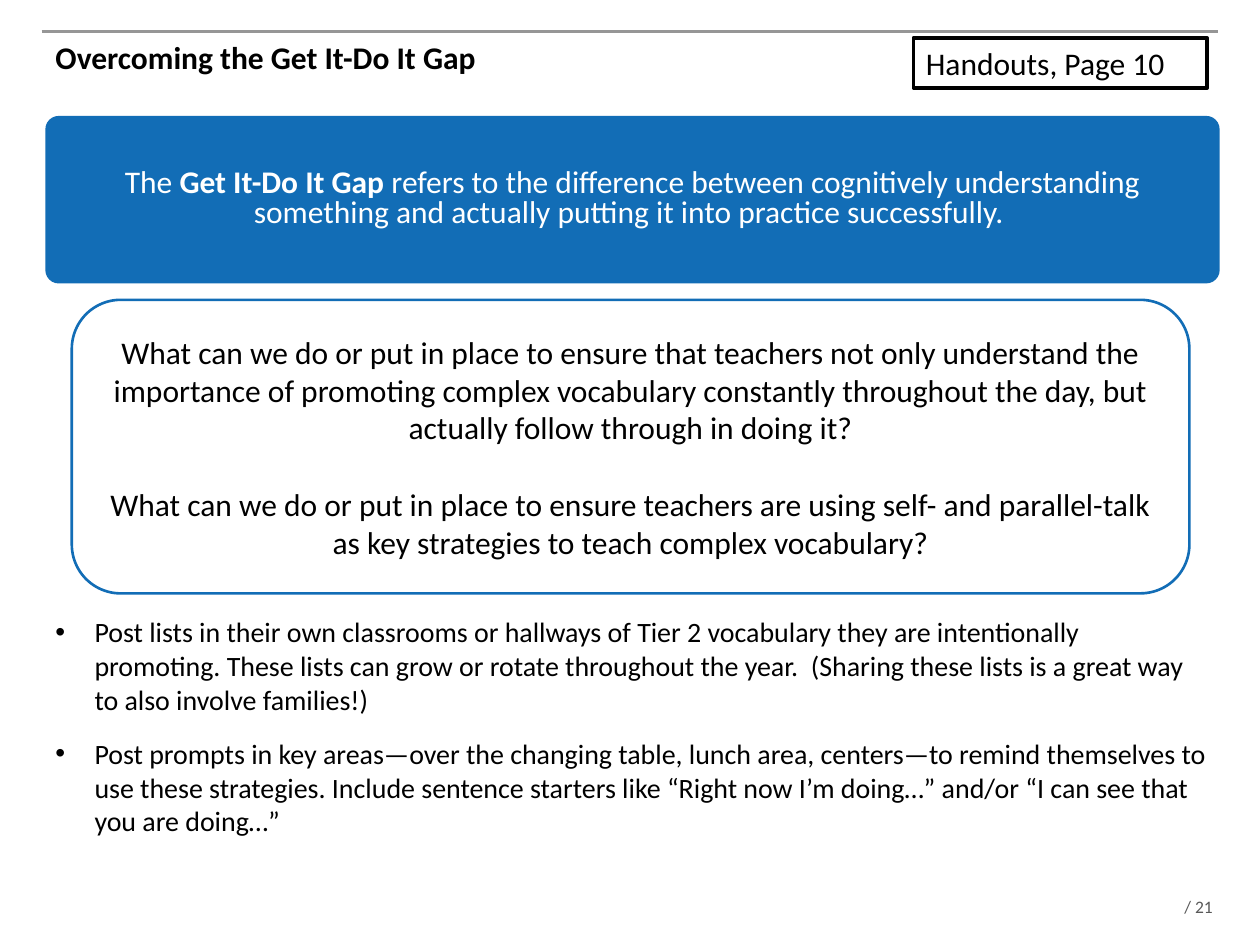
import dataclasses
import typing

import lxml.etree
import pptx
import pptx.dml.color
import pptx.enum.shapes
import pptx.enum.text
import pptx.oxml.ns
import pptx.util

Inches = pptx.util.Inches
Pt = pptx.util.Pt
Color = pptx.dml.color.RGBColor.from_string
Align = pptx.enum.text.PP_ALIGN
Anchor = pptx.enum.text.MSO_ANCHOR
Shape = pptx.enum.shapes.MSO_SHAPE
Fit = pptx.enum.text.MSO_AUTO_SIZE


@dataclasses.dataclass(frozen=True)
class Theme:
    font: str = "Calibri"
    blue: str = "126DB6"
    black: str = "000000"
    white: str = "FFFFFF"
    rule: str = "969696"
    gray: str = "595959"
    head: int = 18
    list: int = 16
    note: int = 10


THEME = Theme()


class Run(typing.NamedTuple):
    text: str
    bold: bool = False


@dataclasses.dataclass(frozen=True)
class Text:
    paras: list[list[Run]]
    size: int = THEME.head
    color: str = THEME.black
    align: Align = Align.LEFT
    anchor: Anchor = Anchor.TOP
    gap: float = 0
    lead: float = 1.0
    bullet: bool = False


@dataclasses.dataclass(frozen=True)
class Box:
    kind: Shape
    area: tuple[float, float, float, float]
    text: Text
    fill: str | None = None
    line: str | None = None
    width: float = 0
    round: float | None = None


def apply(item: typing.Any, form: dict[str, typing.Any]) -> None:
    for name, value in form.items():
        setattr(item, name, value)


def place(shape: typing.Any, area: tuple[float, float, float, float]) -> None:
    names = ("left", "top", "width", "height")
    apply(shape, dict(zip(names, map(Inches, area))))


def add_bullet(para: typing.Any) -> None:
    props = para._p.get_or_add_pPr()
    props.set("marL", str(Inches(0.31)))
    props.set("indent", str(Inches(-0.31)))
    for tag, key, value in (("a:buFont", "typeface", "Arial"), ("a:buChar", "char", "•")):
        lxml.etree.SubElement(props, pptx.oxml.ns.qn(tag)).set(key, value)


def write(frame: typing.Any, text: Text) -> None:
    apply(frame, {"word_wrap": True, "auto_size": Fit.NONE, "vertical_anchor": text.anchor})
    for index, runs in enumerate(text.paras):
        para = frame.add_paragraph() if index else frame.paragraphs[0]
        if text.bullet:
            add_bullet(para)
        apply(para, {
            "alignment": text.align,
            "line_spacing": text.lead,
            "space_before": Pt(text.gap if index else 0),
        })
        for part in runs:
            run = para.add_run()
            run.text = part.text
            apply(run.font, {"name": THEME.font, "size": Pt(text.size), "bold": part.bold})
            run.font.color.rgb = Color(text.color)


def draw_box(slide: typing.Any, box: Box) -> None:
    shape = slide.shapes.add_shape(box.kind, *map(Inches, box.area))
    shape.shadow.inherit = False
    if box.round is not None:
        shape.adjustments[0] = box.round
    if box.fill:
        shape.fill.solid()
        shape.fill.fore_color.rgb = Color(box.fill)
    else:
        shape.fill.background()
    if box.line:
        shape.line.color.rgb = Color(box.line)
        shape.line.width = Pt(box.width)
    else:
        shape.line.fill.background()
    write(shape.text_frame, box.text)


def draw_rule(slide: typing.Any, left: float, right: float, top: float) -> None:
    rule = slide.shapes.add_connector(
        pptx.enum.shapes.MSO_CONNECTOR.STRAIGHT,
        Inches(left), Inches(top), Inches(right), Inches(top))
    rule.line.color.rgb = Color(THEME.rule)
    rule.line.width = Pt(2)
    lxml.etree.SubElement(rule._element.spPr, pptx.oxml.ns.qn("a:effectLst"))


TITLE = Text([[Run("Overcoming the Get It-Do It Gap", True)]])
TIPS = Text([
    [Run("Post lists in their own classrooms or hallways of Tier 2 vocabulary they are "
         "intentionally promoting. These lists can grow or rotate throughout the year.  "
         "(Sharing these lists is a great way to also involve families!)")],
    [Run("Post prompts in key areas—over the changing table, lunch area, centers—to remind "
         "themselves to use these strategies. Include sentence starters like “Right now I’m "
         "doing…” and/or “I can see that you are doing…”")],
], size=THEME.list, gap=12, bullet=True)
BOXES = [
    # Definition
    Box(Shape.ROUNDED_RECTANGLE, (0.36, 0.92, 9.32, 1.33), Text([[
        Run("The "),
        Run("Get It-Do It Gap ", True),
        Run("refers to the difference between cognitively understanding something and "
            "actually putting it into practice successfully. "),
    ]], color=THEME.white, align=Align.CENTER, anchor=Anchor.MIDDLE, lead=0.8),
        fill=THEME.blue, round=0.08),
    # Questions
    Box(Shape.ROUNDED_RECTANGLE, (0.57, 2.38, 8.87, 2.33), Text([
        [Run("What can we do or put in place to ensure that teachers not only understand the "
             "importance of promoting complex vocabulary constantly throughout the day, but "
             "actually follow through in doing it?")],
        [Run("What can we do or put in place to ensure teachers are using self- and "
             "parallel-talk as key strategies to teach complex vocabulary?")],
    ], align=Align.CENTER, anchor=Anchor.MIDDLE, gap=22), line=THEME.blue, width=1.5),
    # Handout label
    Box(Shape.RECTANGLE, (7.25, 0.3, 2.33, 0.4), Text([[Run("Handouts, Page 10")]]),
        fill=THEME.white, line=THEME.black, width=2),
]


def main() -> None:
    deck = pptx.Presentation()
    apply(deck, {"slide_width": Inches(10), "slide_height": Inches(7.5)})
    slide = deck.slides.add_slide(deck.slide_layouts[1])

    # Top rule, title and list
    draw_rule(slide, 0.33, 9.67, 0.25)
    title, body = slide.placeholders
    place(title, (0.34, 0.25, 9.32, 0.92))
    write(title.text_frame, TITLE)
    place(body, (0.34, 4.83, 9.34, 1.88))
    write(body.text_frame, TIPS)

    for box in BOXES:
        draw_box(slide, box)

    # Page count
    count = slide.shapes.add_textbox(*map(Inches, (9.4, 7.11, 0.6, 0.17)))
    sides = ("left", "top", "right", "bottom")
    apply(count.text_frame, {f"margin_{side}": 0 for side in sides})
    write(count.text_frame, Text([[Run("/ 21")]], size=THEME.note, color=THEME.gray))

    deck.save("out.pptx")


if __name__ == "__main__":
    main()
